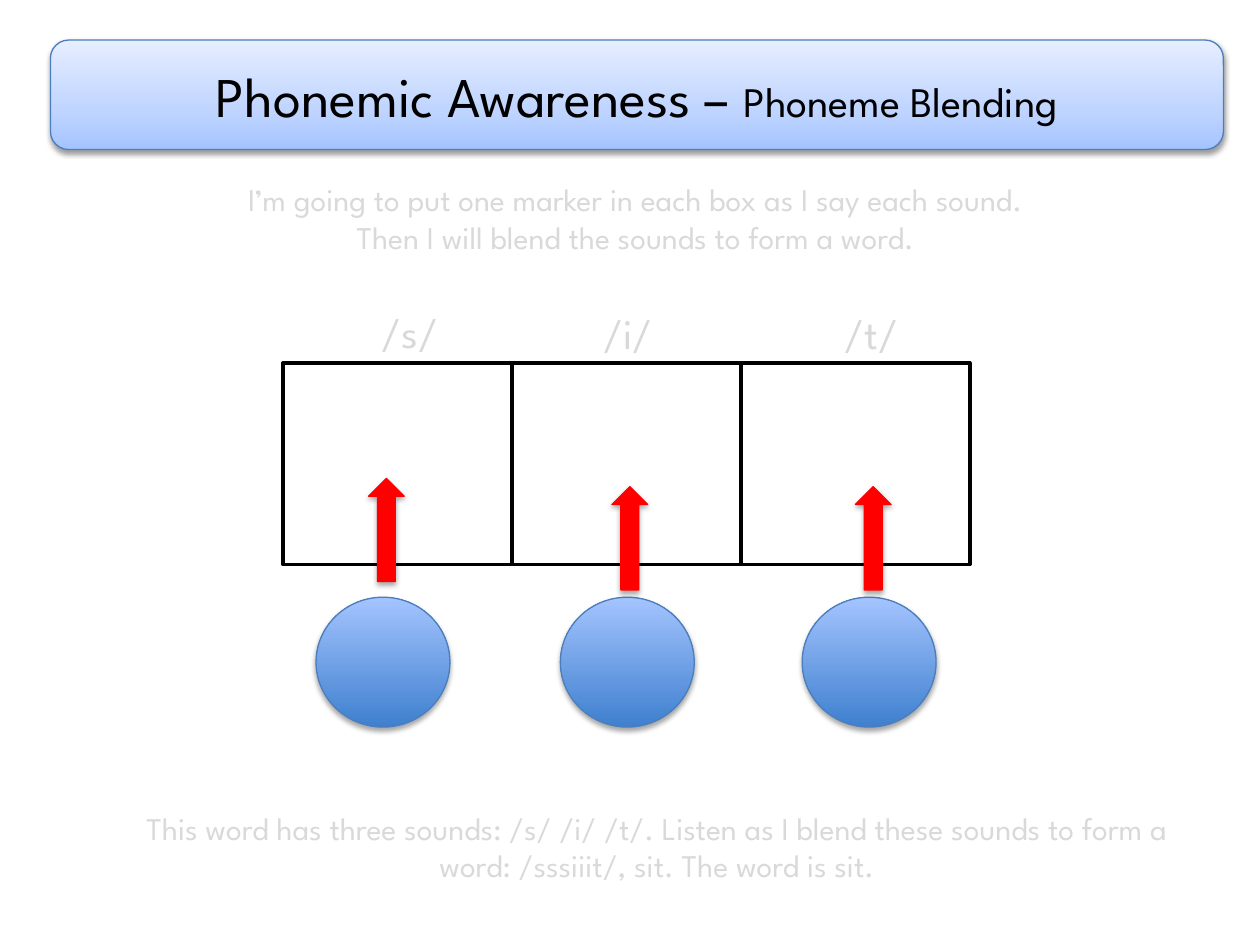
from lxml.etree import SubElement
from pptx import Presentation
from pptx.dml.color import RGBColor
from pptx.enum.shapes import MSO_SHAPE as Shape
from pptx.enum.text import MSO_ANCHOR as Anchor, MSO_AUTO_SIZE as AutoSize, PP_ALIGN as Align
from pptx.oxml.ns import qn
from pptx.util import Pt

COLORS = {
    "black": "000000",
    "white": "FFFFFF",
    "faint": "D9D9D9",
    "red": "FF0000",
    "outline": "4B7EBC",
    "marker": "3F80CE",
    "sky": "A4C4FF",
    "pale": "BFD4FF",
    "mist": "E6EEFF",
}
BANNER_STOPS = [(0, "sky"), (35, "pale"), (100, "mist")]
MARKER_STOPS = [(0, "marker"), (100, "sky")]


def set_all(target, values):
    for name, value in values.items():
        setattr(target, name, value)


class SlideBuilder:
    font_name = "League Spartan"
    frame_format = {"word_wrap": True, "auto_size": AutoSize.SHAPE_TO_FIT_TEXT}

    def __init__(self, slide):
        self.slide = slide

    def color(self, name):
        return RGBColor.from_string(COLORS[name])

    def add_runs(self, paragraph, runs, color, align):
        paragraph.alignment = align
        for text, size in runs:
            run = paragraph.add_run()
            run.text = text
            set_all(run.font, {"name": self.font_name, "size": Pt(size)})
            run.font.color.rgb = self.color(color)

    def text(self, box, lines, size, align=Align.CENTER):
        frame = self.slide.shapes.add_textbox(*map(Pt, box)).text_frame
        set_all(frame, self.frame_format)
        for index, line in enumerate(lines):
            paragraph = frame.add_paragraph() if index else frame.paragraphs[0]
            self.add_runs(paragraph, [(line, size)], "faint", align)

    def shape(self, kind, box, fill, line, line_width=0.75, shadow=None, rotation=0):
        shape = self.slide.shapes.add_shape(kind, *map(Pt, box))
        shape.rotation = rotation
        if isinstance(fill, list):
            self.gradient(shape, fill)
        else:
            shape.fill.solid()
            shape.fill.fore_color.rgb = self.color(fill)
        shape.line.color.rgb = self.color(line)
        shape.line.width = Pt(line_width)
        shape.shadow.inherit = False
        if shadow:
            self.shadow(shape, *shadow)
        return shape

    def gradient(self, shape, stops):
        shape.fill.gradient()
        shape.fill.gradient_angle = 90
        stop_list = shape._element.spPr.find(qn("a:gradFill")).find(qn("a:gsLst"))
        stop_list.clear()
        for position, name in stops:
            stop = SubElement(stop_list, qn("a:gs"), pos=str(position * 1000))
            SubElement(stop, qn("a:srgbClr"), val=COLORS[name])

    def shadow(self, shape, opacity, distance):
        effects = shape._element.spPr.find(qn("a:effectLst"))
        outer = SubElement(effects, qn("a:outerShdw"), blurRad=str(Pt(3.1)),
                           dist=str(Pt(distance)), dir="5400000", rotWithShape="0")
        color = SubElement(outer, qn("a:srgbClr"), val=COLORS["black"])
        SubElement(color, qn("a:alpha"), val=str(opacity * 1000))

    def banner(self, box, runs):
        shape = self.shape(Shape.ROUNDED_RECTANGLE, box, BANNER_STOPS, "outline", shadow=(38, 1.6))
        shape.text_frame.vertical_anchor = Anchor.MIDDLE
        self.add_runs(shape.text_frame.paragraphs[0], runs, "black", Align.CENTER)

    def sound_box(self, left):
        self.shape(Shape.RECTANGLE, (left, 207.4, 130.8, 115.2), "white", "black", 2)

    def marker(self, left):
        self.shape(Shape.OVAL, (left, 341.3, 76.5, 74.2), MARKER_STOPS, "outline", shadow=(35, 1.8))

    def arrow(self, left, top):
        self.shape(Shape.RIGHT_ARROW, (left, top, 59, 20.4), "red", "red",
                   shadow=(35, 1.8), rotation=270)


def main():
    presentation = Presentation()
    set_all(presentation, {"slide_width": Pt(720), "slide_height": Pt(540)})
    builder = SlideBuilder(presentation.slides.add_slide(presentation.slide_layouts[6]))

    builder.banner((28.8, 22.9, 670.3, 62.6),
                   [("Phonemic Awareness – ", 32), ("Phoneme Blending", 24)])
    builder.text((46, 99.4, 634.3, 50.9),
                 ["I’m going to put one marker in each box as I say each sound.",
                  "Then I will blend the sounds to form a word."], 18)
    for column in range(3):
        builder.sound_box(161.8 + 130.8 * column)
    for left in (180.6, 320.2, 458.4):
        builder.marker(left)
    for sound, left, top in (("/s/", 211, 171.4), ("/i/", 337.7, 172.3), ("/t/", 475.6, 172.3)):
        builder.text((left, top, 59, 36), [sound], 24, Align.LEFT)
    for column, top in enumerate((292.6, 297.4, 297.4)):
        builder.arrow(191.3 + 139.1 * column, top)
    builder.text((58.3, 458.6, 634.3, 50.9),
                 ["This word has three sounds: /s/ /i/ /t/. Listen as I blend these sounds "
                  "to form a word: /sssiiit/, sit. The word is sit."], 18)
    presentation.save("out.pptx")


if __name__ == "__main__":
    main()
